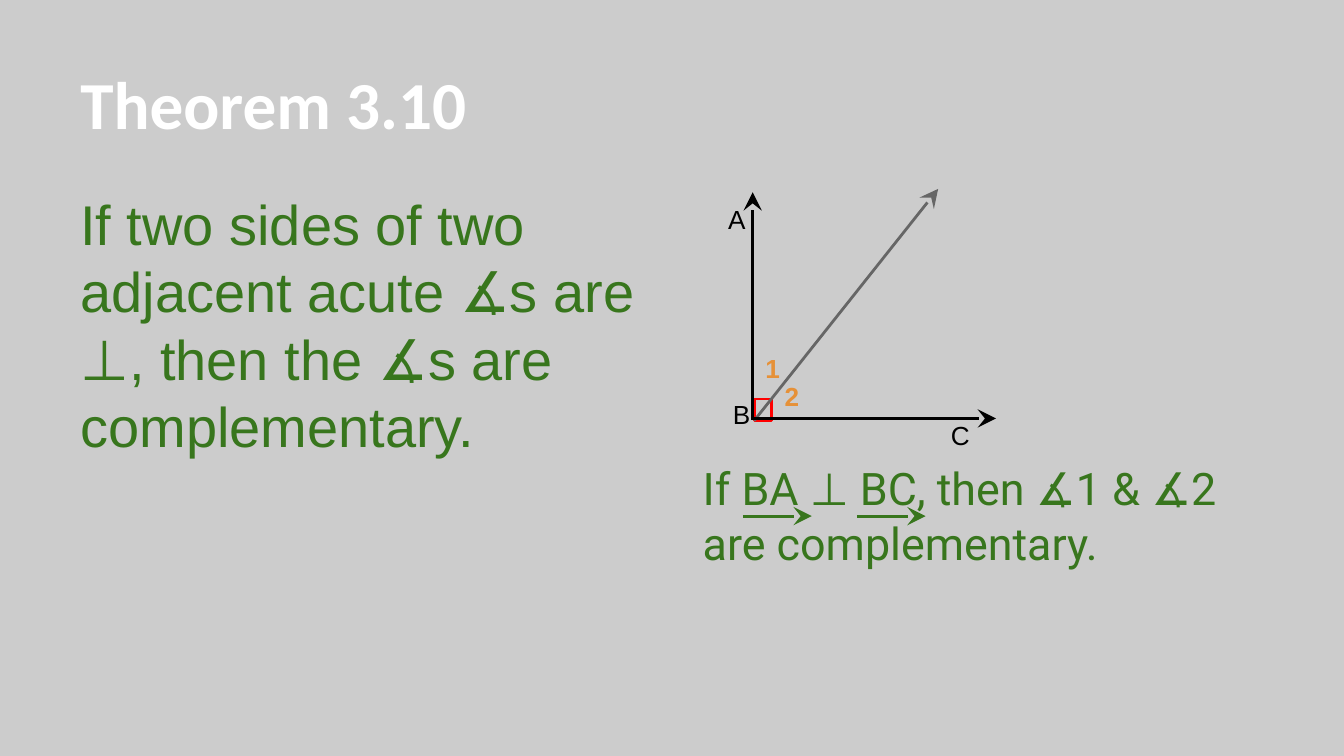
from typing import NamedTuple

from lxml.etree import SubElement
from pptx import Presentation
from pptx.dml.color import RGBColor
from pptx.enum.shapes import MSO_CONNECTOR, MSO_SHAPE
from pptx.enum.text import MSO_ANCHOR
from pptx.oxml.ns import qn
from pptx.slide import Slide
from pptx.util import Pt

COLORS = {
    "background": "CCCCCC",
    "title": "FFFFFF",
    "theorem": "38761D",
    "side": "000000",
    "ray": "666666",
    "angle": "E69138",
    "right angle": "FF0000",
}
LINE_WIDTH = 1.5
LABEL_HEIGHT = 36


class TextBlock(NamedTuple):
    text: str
    left: float
    top: float
    width: float
    height: float
    color: str
    font: dict
    line_spacing: float | None = None
    anchor: MSO_ANCHOR = MSO_ANCHOR.TOP


class Arrow(NamedTuple):
    start: tuple[float, float]
    tip: tuple[float, float]
    color: str


def rgb(name: str) -> RGBColor:
    return RGBColor.from_string(COLORS[name])


def label(text: str, left: float, top: float, color: str, bold: bool = False) -> TextBlock:
    font = {"name": "Arial", "size": Pt(14), "bold": bold}
    return TextBlock(text, left, top, 26.6, LABEL_HEIGHT, color, font)


def draw_text(slide: Slide, block: TextBlock) -> None:
    box = slide.shapes.add_textbox(
        Pt(block.left), Pt(block.top), Pt(block.width), Pt(block.height)
    )
    frame = box.text_frame
    frame.word_wrap = True
    frame.vertical_anchor = block.anchor
    for side in ("left", "top", "right", "bottom"):
        setattr(frame, f"margin_{side}", Pt(7.2))
    paragraph = frame.paragraphs[0]
    if block.line_spacing:
        paragraph.line_spacing = Pt(block.line_spacing)
    run = paragraph.add_run()
    run.text = block.text
    for attribute, value in block.font.items():
        setattr(run.font, attribute, value)
    run.font.color.rgb = rgb(block.color)


def draw_arrow(slide: Slide, arrow: Arrow) -> None:
    connector = slide.shapes.add_connector(
        MSO_CONNECTOR.STRAIGHT, *(Pt(value) for value in arrow.start + arrow.tip)
    )
    connector.line.width = Pt(LINE_WIDTH)
    connector.line.color.rgb = rgb(arrow.color)
    properties = connector.line._get_or_add_ln()
    SubElement(properties, qn("a:tailEnd"), type="stealth", w="lg", len="lg")
    SubElement(connector._element.spPr, qn("a:effectLst"))


def draw_right_angle(slide: Slide) -> None:
    shape = slide.shapes.add_shape(
        MSO_SHAPE.RECTANGLE, Pt(404), Pt(213.8), Pt(9.5), Pt(11.5)
    )
    shape.shadow.inherit = False
    shape.fill.solid()
    shape.fill.fore_color.rgb = rgb("background")
    shape.line.color.rgb = rgb("right angle")
    shape.line.width = Pt(LINE_WIDTH)


TEXT_BLOCKS = [
    TextBlock(
        "Theorem 3.10", 36, 16.5, 648, 67.5, "title",
        {"name": "Calibri", "size": Pt(36), "bold": True}, anchor=MSO_ANCHOR.BOTTOM,
    ),
    TextBlock(
        "If two sides of two adjacent acute ∡s are ⊥, then the ∡s are complementary.",
        36, 94.5, 314.6, 293, "theorem",
        {"name": "Arial", "size": Pt(30)}, line_spacing=36,
    ),
    TextBlock(
        "If BA ⊥ BC, then ∡1 & ∡2 are complementary.",
        369.4, 239.7, 314.6, 147.8, "theorem",
        {"name": "Roboto", "size": Pt(24)}, line_spacing=29,
    ),
    label("A", 383, 101.5, "side"),
    label("B", 385.6, 206.2, "side"),
    label("C", 502.3, 217.4, "side"),
    label("1", 403, 181.4, "angle", bold=True),
    label("2", 413.3, 196.6, "angle", bold=True),
]

ARROWS = [
    Arrow((404, 225.4), (502.6, 101.2), "ray"),
    Arrow((398, 276.5), (434.9, 276.5), "theorem"),
    Arrow((459, 276.5), (495.9, 276.5), "theorem"),
    Arrow((403.6, 224.2), (533.6, 224.2), "side"),
    Arrow((403.2, 225), (403.2, 103), "side"),
]


def main() -> None:
    presentation = Presentation()
    presentation.slide_width = Pt(720)
    presentation.slide_height = Pt(405)
    slide = presentation.slides.add_slide(presentation.slide_layouts[6])
    slide.background.fill.solid()
    slide.background.fill.fore_color.rgb = rgb("background")
    draw_right_angle(slide)
    for block in TEXT_BLOCKS:
        draw_text(slide, block)
    for arrow in ARROWS:
        draw_arrow(slide, arrow)
    presentation.save("out.pptx")


if __name__ == "__main__":
    main()
